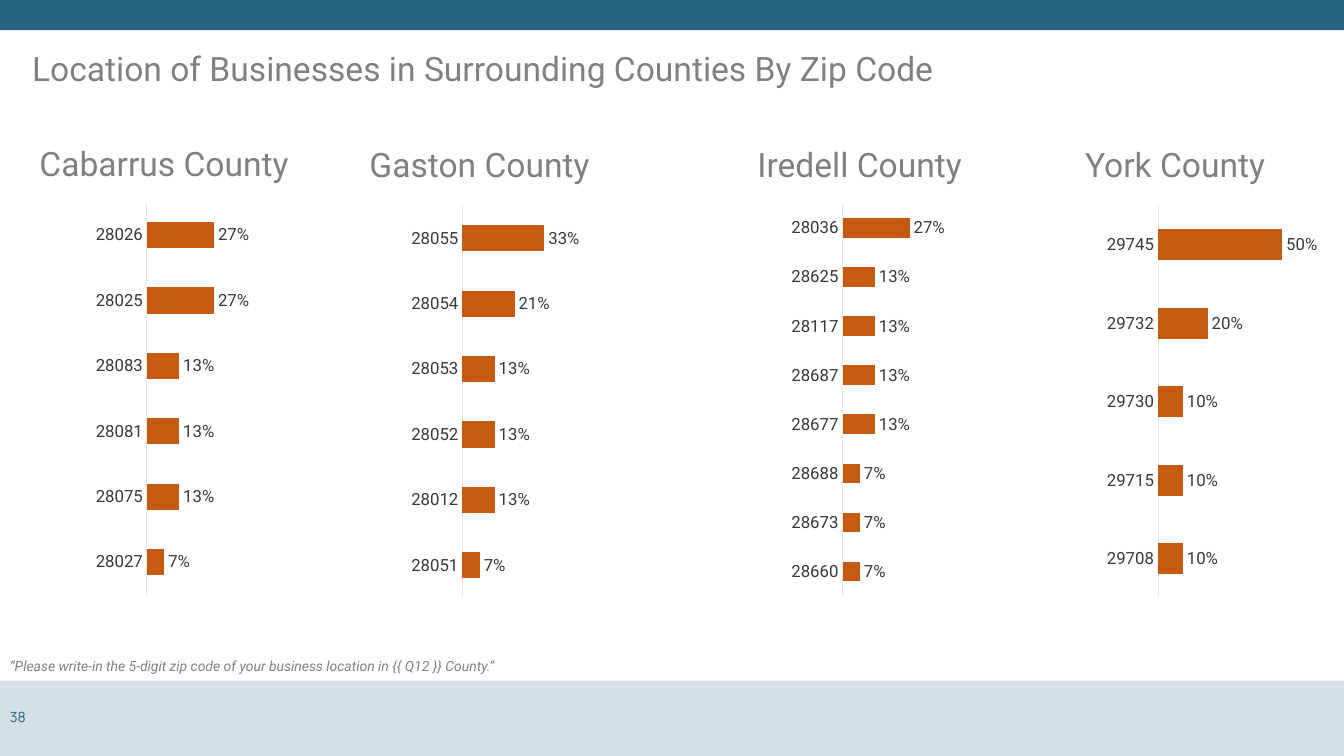
from lxml import etree
from pptx import Presentation
from pptx.chart.data import CategoryChartData
from pptx.dml.color import RGBColor
from pptx.enum.chart import XL_CHART_TYPE, XL_LABEL_POSITION, XL_TICK_LABEL_POSITION, XL_TICK_MARK
from pptx.enum.shapes import MSO_SHAPE
from pptx.enum.text import MSO_ANCHOR, PP_ALIGN
from pptx.oxml import parse_xml
from pptx.oxml.ns import nsdecls, qn
from pptx.util import Cm, Pt

COLORS = {
    "band": "296581",
    "heading": "808080",
    "label": "3B3838",
    "axis": "E7E6E6",
    "bar": "C55A11",
}
SLIDE_W, SLIDE_H = 33.87, 19.05
HEADING_W, HEADING_H = 7.21, 1.27
CHART_W, CHART_H = 14.3, 10.39
PLOT = {"x": 0.329, "y": 0.029, "w": 0.438, "h": 0.952}

# County, left and top of the heading, and shares by zip code from bottom to top
COUNTIES = [
    ("Cabarrus", 0.53, 3.48, {"28027": 0.07, "28075": 0.13, "28081": 0.13,
                              "28083": 0.13, "28025": 0.27, "28026": 0.27}),
    ("Gaston", 8.48, 3.51, {"28051": 0.07, "28012": 0.13, "28052": 0.13,
                            "28053": 0.13, "28054": 0.21, "28055": 0.33}),
    ("Iredell", 18.06, 3.51, {"28660": 0.07, "28673": 0.07, "28688": 0.07, "28677": 0.13,
                              "28687": 0.13, "28117": 0.13, "28625": 0.13, "28036": 0.27}),
    ("York", 26.01, 3.51, {"29708": 0.1, "29715": 0.1, "29730": 0.1,
                           "29732": 0.2, "29745": 0.5}),
]
CHART_TOPS = {"Cabarrus": 4.8, "Gaston": 4.88, "Iredell": 4.83, "York": 4.88}


def rgb(name):
    return RGBColor.from_string(COLORS[name])


def set_font(font, color, **values):
    font.color.rgb = rgb(color)
    for name, value in values.items():
        setattr(font, name, value)


def add_text(s, box, text, size, color="heading", name="Roboto", italic=False,
             **paragraph_values):
    tf = s.shapes.add_textbox(*map(Cm, box)).text_frame
    tf.word_wrap = True
    p = tf.paragraphs[0]
    for key, value in paragraph_values.items():
        setattr(p, key, value)
    r = p.add_run()
    r.text = text
    set_font(r.font, color, size=Pt(size), name=name, italic=italic)
    return tf


def add_band(s, top, height, opacity=100):
    sp = s.shapes.add_shape(MSO_SHAPE.RECTANGLE, *map(Cm, (0, top, SLIDE_W, height)))
    sp.shadow.inherit = False
    sp.line.fill.background()
    sp.fill.solid()
    sp.fill.fore_color.rgb = rgb("band")
    if opacity < 100:
        color = sp.fill._xPr.find(qn("a:solidFill"))[0]
        etree.SubElement(color, qn("a:alpha"), val=str(opacity * 1000))


def set_plot_layout(chart):
    """Fix the inner plot area to the fractions in PLOT."""
    area = chart._chartSpace.chart.plotArea
    for old in area.findall(qn("c:layout")):
        area.remove(old)
    modes = "".join(f'<c:{k}Mode val="edge"/>' for k in "xy")
    sizes = "".join(f'<c:{k} val="{v}"/>' for k, v in PLOT.items())
    area.insert(0, parse_xml(
        f'<c:layout {nsdecls("c")}><c:manualLayout><c:layoutTarget val="inner"/>'
        f'{modes}{sizes}</c:manualLayout></c:layout>'))


def add_zip_chart(s, box, shares):
    data = CategoryChartData(number_format="0%")
    data.categories = shares.keys()
    data.add_series("Series 1", shares.values())
    chart = s.shapes.add_chart(XL_CHART_TYPE.BAR_CLUSTERED, *map(Cm, box), data).chart
    chart.has_title = chart.has_legend = False
    set_font(chart.font, "label", size=Pt(12), name="Roboto")
    set_plot_layout(chart)

    axis = chart.category_axis
    axis.major_tick_mark = axis.minor_tick_mark = XL_TICK_MARK.NONE
    axis.tick_label_position = XL_TICK_LABEL_POSITION.NEXT_TO_AXIS
    axis.format.line.color.rgb = rgb("axis")
    axis.format.line.width = Pt(0.75)
    shares_axis = chart.value_axis
    for key, value in {"minimum_scale": 0, "maximum_scale": 1,
                       "has_major_gridlines": False, "visible": False}.items():
        setattr(shares_axis, key, value)

    plot = chart.plots[0]
    plot.gap_width = 150
    plot.vary_by_categories = False
    fill = plot.series[0].format.fill
    fill.solid()
    fill.fore_color.rgb = rgb("bar")
    plot.has_data_labels = True
    for key, value in {"show_value": True, "number_format": "0%",
                       "number_format_is_linked": False,
                       "position": XL_LABEL_POSITION.OUTSIDE_END}.items():
        setattr(plot.data_labels, key, value)
    set_font(plot.data_labels.font, "label", size=Pt(12), name="Roboto")


def add_county(s, left, top, county, shares):
    add_zip_chart(s, (left - 1.53, CHART_TOPS[county], CHART_W, CHART_H), shares)
    add_text(s, (left, top, HEADING_W, HEADING_H), f"{county} County", 24,
             alignment=PP_ALIGN.CENTER)


def add_frame(s):
    """Place the bands, title, question and page number."""
    add_band(s, 17.15, SLIDE_H - 17.15, opacity=20)
    add_band(s, 0, 0.76)
    add_text(s, (0.56, 1.19, 23.24, 1.22),
             "Location of Businesses in Surrounding Counties By Zip Code", 24,
             line_spacing=0.9)
    number = add_text(s, (0, 17.55, 7.62, 1.02), "38", 10, "band", "Manrope")
    number.vertical_anchor = MSO_ANCHOR.MIDDLE
    add_text(s, (0, 16.48, 13.61, 0.69),
             "“Please write-in the 5-digit zip code of your business location in "
             "{{ Q12 }} County.”", 10, italic=True, line_spacing=0.9)


def main():
    prs = Presentation()
    prs.slide_width, prs.slide_height = Cm(SLIDE_W), Cm(SLIDE_H)
    s = prs.slides.add_slide(prs.slide_layouts[6])
    add_frame(s)
    for county, left, top, shares in COUNTIES:
        add_county(s, left, top, county, shares)
    prs.save("out.pptx")


if __name__ == "__main__":
    main()
